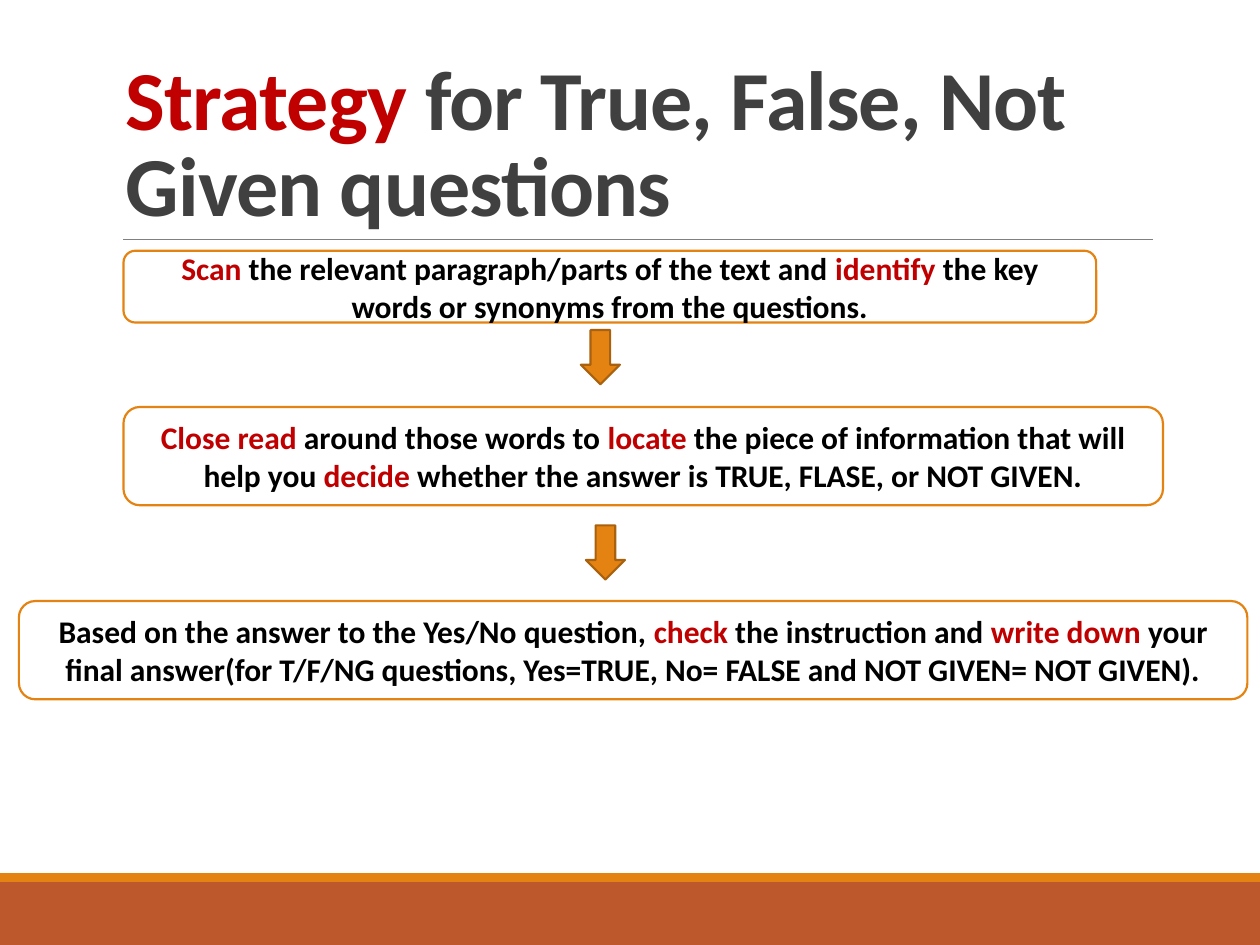
from lxml import etree
from pptx import Presentation
from pptx.dml.color import RGBColor
from pptx.enum.shapes import MSO_CONNECTOR, MSO_SHAPE
from pptx.enum.text import MSO_ANCHOR, PP_ALIGN
from pptx.oxml.ns import qn
from pptx.util import Inches, Pt

RECT = MSO_SHAPE.RECTANGLE
ROUND = MSO_SHAPE.ROUNDED_RECTANGLE
DOWN = MSO_SHAPE.DOWN_ARROW
LINE = MSO_CONNECTOR.STRAIGHT
MIDDLE = MSO_ANCHOR.MIDDLE
BOTTOM = MSO_ANCHOR.BOTTOM
CENTER = PP_ALIGN.CENTER

FONT = "Calibri"
RED = "C00000"
ORANGE = "E48312"
BROWN = "A9610D"
RUST = "BD582C"
GREY = "404040"

TITLE = "*Strategy* for True, False, Not Given questions"
STEPS = [
    (0.98, 1.99, 7.72, 0.57,
     "*Scan* the relevant paragraph/parts of the text and *identify* the key "
     "words or synonyms from the questions."),
    (0.98, 3.23, 8.25, 0.78,
     "*Close read *around those words to *locate* the piece of information that "
     "will help you *decide* whether the answer is TRUE, FLASE, or NOT GIVEN."),
    (0.15, 4.77, 9.75, 0.78,
     "Based on the answer to the Yes/No question, *check* the instruction and "
     "*write down *your final answer(for T/F/NG questions, Yes=TRUE, No= FALSE "
     "and NOT GIVEN= NOT GIVEN)."),
]
ARROWS = [(4.61, 2.62), (4.65, 4.17)]


def color(code):
    return RGBColor.from_string(code)


def add_block(slide, kind, box, fill, edge=None):
    shape = slide.shapes.add_shape(kind, *map(Inches, box))
    shape.shadow.inherit = False
    shape.fill.solid()
    shape.fill.fore_color.rgb = color(fill)
    if edge:
        shape.line.color.rgb = color(edge)
        shape.line.width = Pt(1.25)
    else:
        shape.line.fill.background()
    return shape


def write(frame, text, size, base, anchor):
    frame.word_wrap = True
    frame.vertical_anchor = anchor
    para = frame.paragraphs[0]
    for i, part in enumerate(text.split("*")):
        if part:
            run = para.add_run()
            run.text = part
            run.font.name = FONT
            run.font.size = Pt(size)
            run.font.bold = True
            run.font.color.rgb = color(RED if i % 2 else base)
    return para


def add_title(slide):
    box = slide.shapes.add_textbox(*map(Inches, (0.9, 0.31, 8.25, 1.59)))
    para = write(box.text_frame, TITLE, 48, GREY, BOTTOM)
    para.line_spacing = 0.85
    for run in para.runs:
        run.font._element.set("spc", "-50")


def add_rule(slide):
    ends = map(Inches, (0.98, 1.9, 9.15, 1.9))
    rule = slide.shapes.add_connector(LINE, *ends)
    rule.line.color.rgb = color("808080")
    rule.line.width = Pt(0.5)
    etree.SubElement(rule._element.spPr, qn("a:effectLst"))


def add_step(slide, box, text):
    shape = add_block(slide, ROUND, box, "FFFFFF", ORANGE)
    para = write(shape.text_frame, text, 18, "000000", MIDDLE)
    para.alignment = CENTER


def main():
    deck = Presentation()
    deck.slide_width = Inches(10)
    deck.slide_height = Inches(7.5)
    slide = deck.slides.add_slide(deck.slide_layouts[6])
    add_block(slide, RECT, (0, 7, 10, 0.5), RUST)
    add_block(slide, RECT, (0, 6.93, 10, 0.07), ORANGE)
    add_rule(slide)
    add_title(slide)
    for *box, text in STEPS:
        add_step(slide, box, text)
    for left, top in ARROWS:
        add_block(slide, DOWN, (left, top, 0.31, 0.43), ORANGE, BROWN)
    deck.save("out.pptx")


if __name__ == "__main__":
    main()
